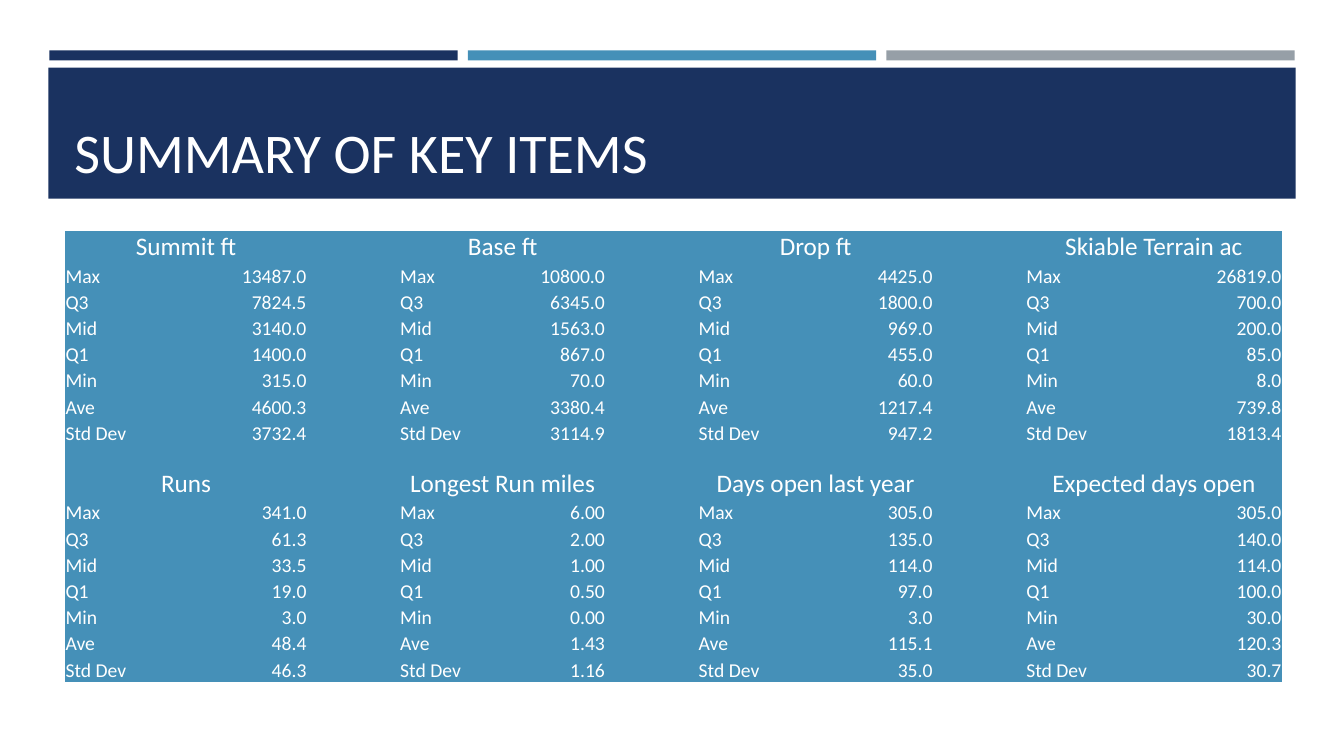
from dataclasses import dataclass

from lxml.etree import SubElement
from pptx import Presentation
from pptx.dml.color import RGBColor
from pptx.enum.shapes import MSO_SHAPE
from pptx.enum.text import MSO_ANCHOR, PP_ALIGN
from pptx.oxml.ns import qn
from pptx.util import Inches, Pt


@dataclass(frozen=True)
class Theme:
    navy: RGBColor = RGBColor.from_string("1A3260")
    blue: RGBColor = RGBColor.from_string("4590B8")
    gray: RGBColor = RGBColor.from_string("969FA7")
    white: RGBColor = RGBColor.from_string("FFFFFF")
    font: str = "Calibri"
    title_size: int = 40
    heading_size: int = 18
    body_size: int = 14
    blank_size: int = 10


theme = Theme()
NO_GRID_STYLE = "{2D5ABB26-0587-4C30-8999-92F81FD0307C}"
STATISTICS = ["Max", "Q3", "Mid", "Q1", "Min", "Ave", "Std Dev"]
BANDS = [
    [
        ("Summit ft", ["13487.0", "7824.5", "3140.0", "1400.0", "315.0", "4600.3", "3732.4"]),
        ("Base ft", ["10800.0", "6345.0", "1563.0", "867.0", "70.0", "3380.4", "3114.9"]),
        ("Drop ft", ["4425.0", "1800.0", "969.0", "455.0", "60.0", "1217.4", "947.2"]),
        ("Skiable Terrain ac", ["26819.0", "700.0", "200.0", "85.0", "8.0", "739.8", "1813.4"]),
    ],
    [
        ("Runs", ["341.0", "61.3", "33.5", "19.0", "3.0", "48.4", "46.3"]),
        ("Longest Run miles", ["6.00", "2.00", "1.00", "0.50", "0.00", "1.43", "1.16"]),
        ("Days open last year", ["305.0", "135.0", "114.0", "97.0", "3.0", "115.1", "35.0"]),
        ("Expected days open", ["305.0", "140.0", "114.0", "100.0", "30.0", "120.3", "30.7"]),
    ],
]
LABEL_WIDTH, GAP_WIDTH = 1, 0.91
VALUE_WIDTHS = [1.41, 1.05, 1.34, 1.55]
HEADING_HEIGHT, BODY_HEIGHT, BLANK_HEIGHT = 0.31, 0.26, 0.22


def add_bar(left, top, width, height, color):
    bar = slide.shapes.add_shape(
        MSO_SHAPE.RECTANGLE, Inches(left), Inches(top), Inches(width), Inches(height)
    )
    bar.shadow.inherit = False
    bar.fill.solid()
    bar.fill.fore_color.rgb = color
    bar.line.fill.background()


def write(text_frame, text, size, alignment):
    paragraph = text_frame.paragraphs[0]
    paragraph.alignment = alignment
    run = paragraph.add_run()
    run.text = text
    run.font.name = theme.font
    run.font.size = Pt(size)
    run.font.color.rgb = theme.white


presentation = Presentation()
presentation.slide_width = Inches(13.33)
presentation.slide_height = Inches(7.5)
slide = presentation.slides.add_slide(presentation.slide_layouts[6])

# Header bars and title
for index, color in enumerate([theme.navy, theme.blue, theme.gray]):
    add_bar(0.49 + index * 4.15, 0.5, 4.05, 0.1, color)
add_bar(0.48, 0.67, 12.37, 1.3, theme.navy)

title = slide.shapes.add_textbox(Inches(0.64), Inches(0.77), Inches(12.06), Inches(1.11))
title.text_frame.word_wrap = True
title.text_frame.vertical_anchor = MSO_ANCHOR.BOTTOM
write(title.text_frame, "SUMMARY OF KEY ITEMS", theme.title_size, PP_ALIGN.LEFT)

# Table grid: label, value and gap columns; two bands parted by a blank row
column_widths = []
for value_width in VALUE_WIDTHS:
    column_widths += [LABEL_WIDTH, value_width, GAP_WIDTH]
column_widths.pop()
band_heights = [HEADING_HEIGHT] + [BODY_HEIGHT] * len(STATISTICS)
row_heights = band_heights + [BLANK_HEIGHT] + band_heights

table = slide.shapes.add_table(
    len(row_heights), len(column_widths), Inches(0.64), Inches(2.29),
    Inches(sum(column_widths)), Inches(sum(row_heights)),
).table
table.first_row = False
table.horz_banding = False
table._tbl.tblPr.find(qn("a:tableStyleId")).text = NO_GRID_STYLE
for column, width in zip(table.columns, column_widths):
    column.width = Inches(width)
for row, height in zip(table.rows, row_heights):
    row.height = Inches(height)

for cell in table.iter_cells():
    cell.fill.solid()
    cell.fill.fore_color.rgb = theme.blue
    cell.vertical_anchor = MSO_ANCHOR.BOTTOM
    cell.margin_left = cell.margin_right = cell.margin_top = Inches(0.01)
    cell.margin_bottom = 0

for band_index, band in enumerate(BANDS):
    top_row = band_index * (len(band_heights) + 1)
    for group_index, (heading, values) in enumerate(band):
        label_column = group_index * 3
        heading_cell = table.cell(top_row, label_column)
        heading_cell.merge(table.cell(top_row, label_column + 1))
        write(heading_cell.text_frame, heading, theme.heading_size, PP_ALIGN.CENTER)
        for row_index, (label, value) in enumerate(zip(STATISTICS, values), top_row + 1):
            label_cell = table.cell(row_index, label_column)
            value_cell = table.cell(row_index, label_column + 1)
            write(label_cell.text_frame, label, theme.body_size, PP_ALIGN.LEFT)
            write(value_cell.text_frame, value, theme.body_size, PP_ALIGN.RIGHT)

# Small type in empty cells keeps their rows from growing
for cell in table.iter_cells():
    if not cell.text_frame.text:
        paragraph = cell.text_frame.paragraphs[0]
        SubElement(paragraph._p, qn("a:endParaRPr"), sz=str(theme.blank_size * 100))

presentation.save("out.pptx")
